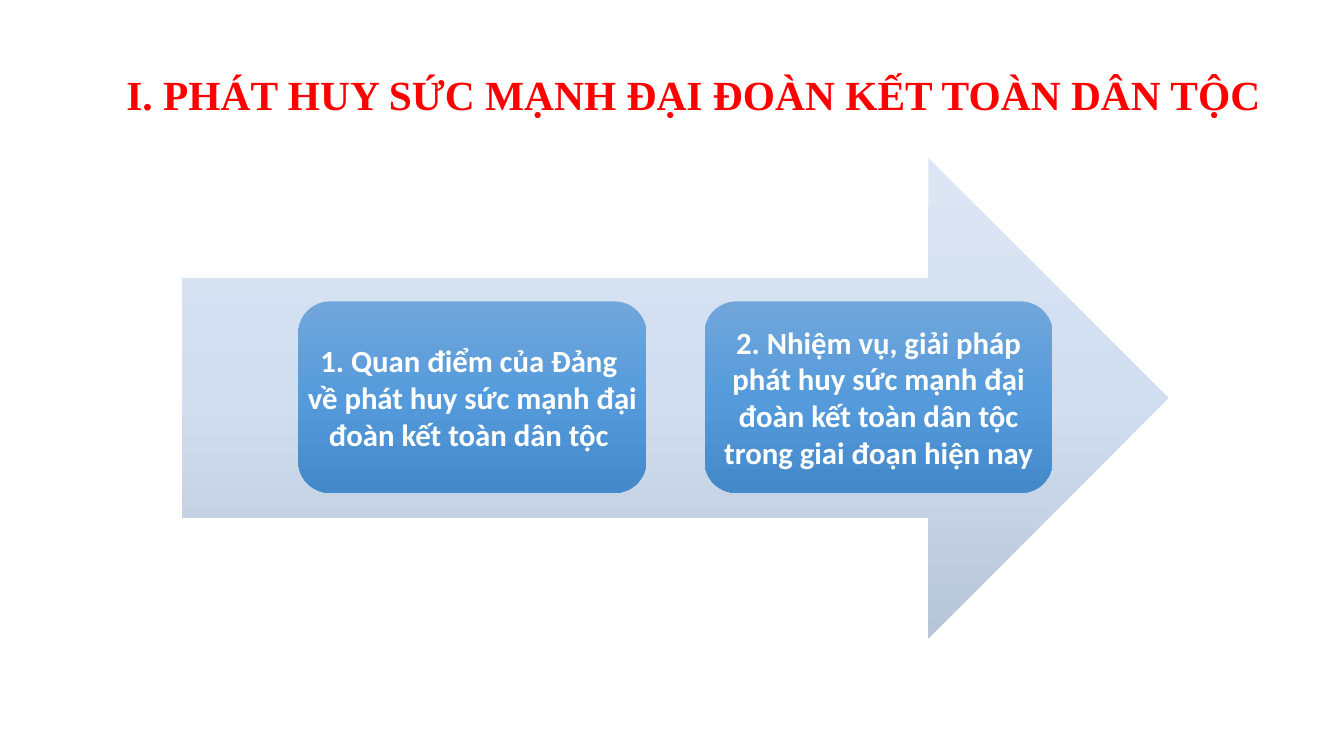
from copy import deepcopy

from pptx import Presentation
from pptx.dml.color import RGBColor
from pptx.enum.shapes import MSO_SHAPE as SHAPE
from pptx.enum.text import MSO_ANCHOR as ANCHOR, PP_ALIGN as ALIGN
from pptx.oxml.ns import qn
from pptx.util import Pt

COLORS = {
    "title": "FF0000",
    "step_text": "FFFFFF",
    "arrow_top": "DBE5F3", "arrow_mid": "D1DEF0", "arrow_base": "B7C5D8",
    "step_top": "71A6DB", "step_mid": "559BDB", "step_base": "448ACA",
}
TITLE = "I. PHÁT HUY SỨC MẠNH ĐẠI ĐOÀN KẾT TOÀN DÂN TỘC"
TITLE_FONT = {"name": "Times New Roman", "size": Pt(29.6), "bold": True}
STEP_FONT = {"name": "Calibri", "size": Pt(22), "bold": True}
STEPS = [
    ["1. Quan điểm của Đảng ", "về phát huy sức mạnh đại đoàn kết toàn dân tộc "],
    ["2. Nhiệm vụ, giải pháp phát huy sức mạnh đại đoàn kết toàn dân tộc "
     "trong giai đoạn hiện nay"],
]
STEP_LEFT, STEP_PITCH = 213.1, 290.2


def rgb(key):
    return RGBColor.from_string(COLORS[key])


def write(frame, lines, font, color, anchor, spacing=None):
    """Fill a text frame with centred paragraphs in one format."""
    frame.word_wrap = True
    frame.vertical_anchor = anchor
    for i, line in enumerate(lines):
        paragraph = frame.add_paragraph() if i else frame.paragraphs[0]
        paragraph.alignment = ALIGN.CENTER
        paragraph.line_spacing = spacing
        run = paragraph.add_run()
        run.text = line
        run.font.color.rgb = rgb(color)
        for attribute, value in font.items():
            setattr(run.font, attribute, value)


def add_shaded(slide, kind, box, shade):
    """Add a borderless shape with a three-stop gradient from top to bottom."""
    shaded = slide.shapes.add_shape(kind, *map(Pt, box))
    shaded.shadow.inherit = False
    shaded.line.fill.background()
    fill = shaded.fill
    fill.gradient()
    fill.gradient_angle = 270
    # A new gradient has two stops, so a third is added
    stop_list = shaded._element.spPr.find(".//" + qn("a:gsLst"))
    stop_list.append(deepcopy(stop_list[0]))
    levels = [("top", 0), ("mid", 0.5), ("base", 1)]
    for stop, (level, position) in zip(fill.gradient_stops, levels):
        stop.position = position
        stop.color.rgb = rgb(f"{shade}_{level}")
    return shaded


def add_title(slide):
    title = slide.shapes.add_textbox(Pt(64.1), Pt(23.8), Pt(863.3), Pt(64.8))
    write(title.text_frame, [TITLE], TITLE_FONT, "title", ANCHOR.BOTTOM, 0.9)


def add_step(slide, index, lines):
    box = (STEP_LEFT + index * STEP_PITCH, 215.3, 248.6, 136.8)
    step = add_shaded(slide, SHAPE.ROUNDED_RECTANGLE, box, "step")
    frame = step.text_frame
    # The rounded corners already inset the text
    for side in ("left", "top", "right", "bottom"):
        setattr(frame, f"margin_{side}", 0)
    write(frame, lines, STEP_FONT, "step_text", ANCHOR.MIDDLE)


def main():
    deck = Presentation()
    deck.slide_width, deck.slide_height = Pt(960), Pt(540)
    slide = deck.slides.add_slide(deck.slide_layouts[6])

    # Arrow behind the two steps
    add_shaded(slide, SHAPE.RIGHT_ARROW, (130.3, 113, 704.2, 342.7), "arrow")
    for index, lines in enumerate(STEPS):
        add_step(slide, index, lines)

    # Heading
    add_title(slide)
    deck.save("out.pptx")


if __name__ == "__main__":
    main()
